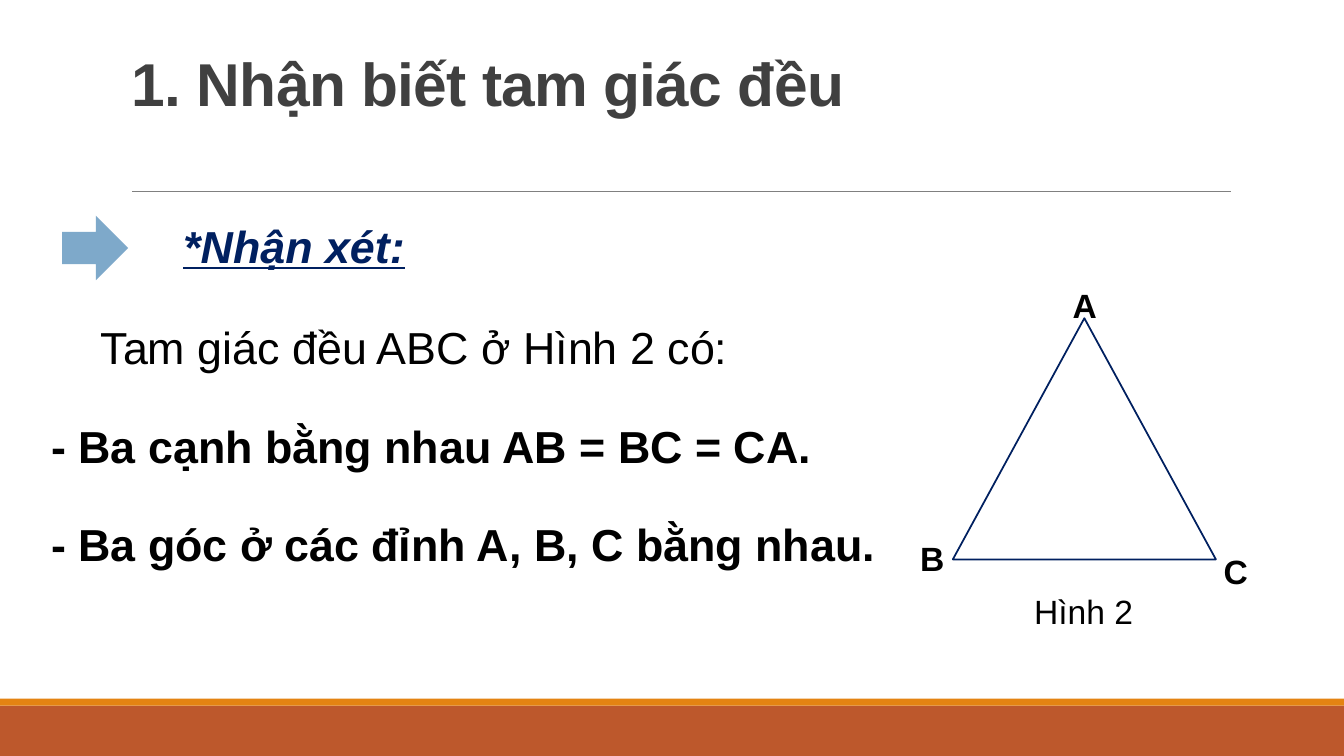
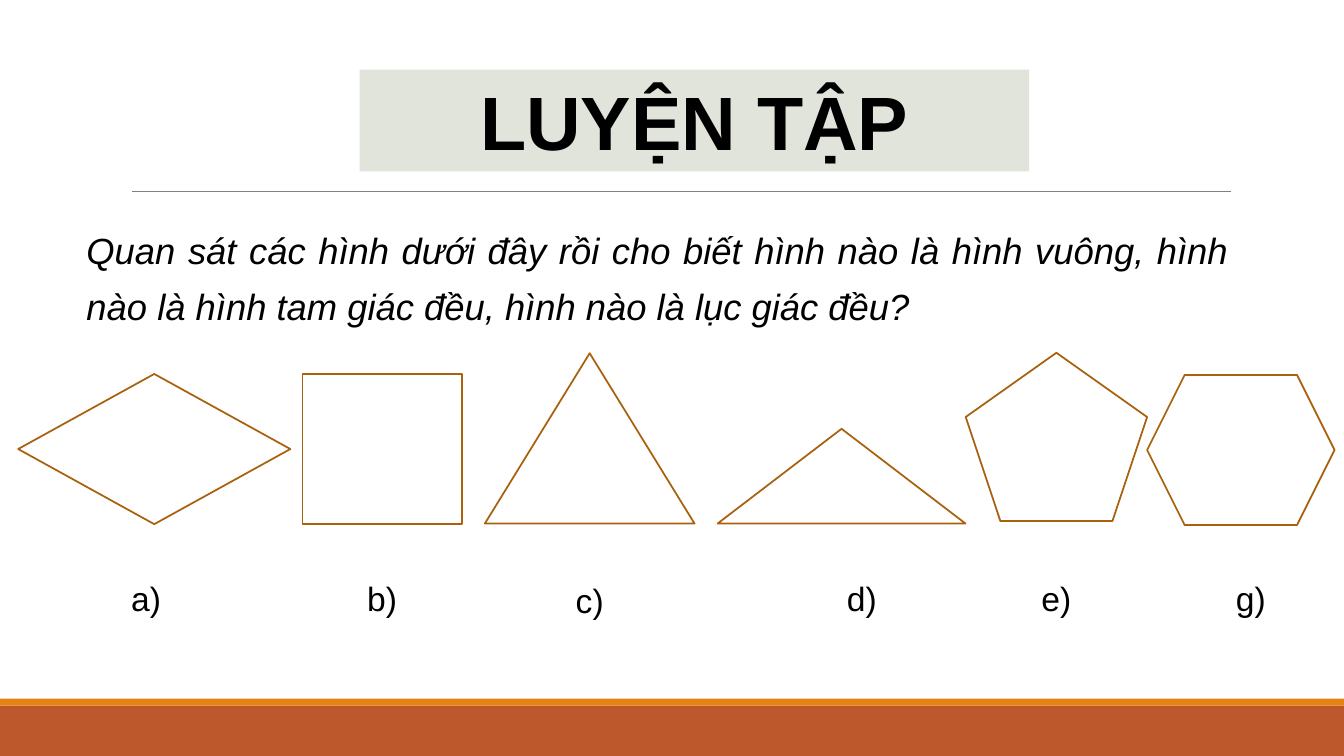
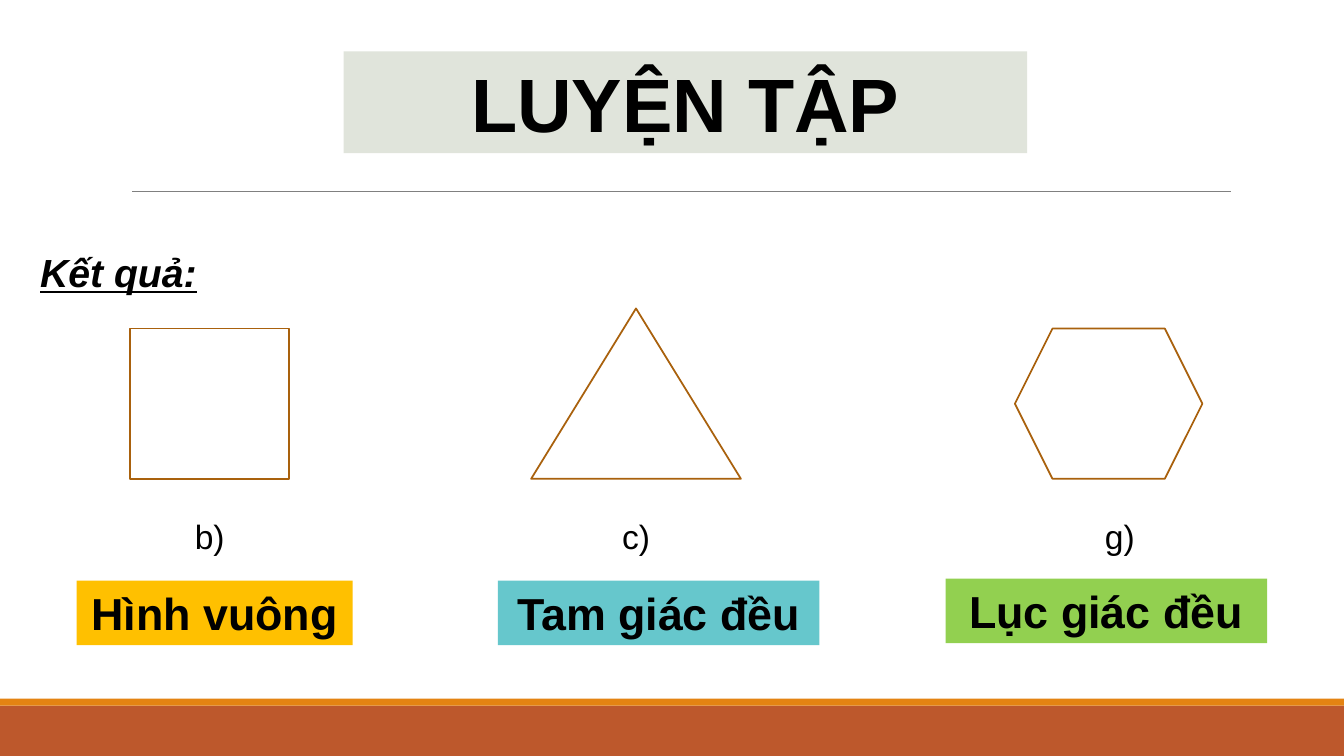
from lxml import etree
from pptx import Presentation
from pptx.dml.color import RGBColor
from pptx.enum.shapes import MSO_CONNECTOR, MSO_SHAPE
from pptx.enum.text import MSO_ANCHOR, PP_ALIGN
from pptx.oxml.ns import qn
from pptx.util import Pt

RECTANGLE, TRIANGLE = MSO_SHAPE.RECTANGLE, MSO_SHAPE.ISOSCELES_TRIANGLE
PENTAGON, HEXAGON = MSO_SHAPE.REGULAR_PENTAGON, MSO_SHAPE.HEXAGON
RHOMBUS, RIGHT_ARROW = MSO_SHAPE.FLOWCHART_DECISION, MSO_SHAPE.RIGHT_ARROW
LEFT, CENTER, JUSTIFY = PP_ALIGN.LEFT, PP_ALIGN.CENTER, PP_ALIGN.JUSTIFY

FONT = "Arial"
BLACK = RGBColor(0x00, 0x00, 0x00)
WHITE = RGBColor(0xFF, 0xFF, 0xFF)
RUST = RGBColor(0xBD, 0x58, 0x2C)
ORANGE = RGBColor(0xE4, 0x83, 0x12)
RULE_GRAY = RGBColor(0x80, 0x80, 0x80)
TITLE_GRAY = RGBColor(0x40, 0x40, 0x40)
NAVY = RGBColor(0x00, 0x20, 0x60)
ARROW_BLUE = RGBColor(0x7E, 0xA9, 0xCA)
BANNER_GRAY = RGBColor(0xE0, 0xE4, 0xDB)
BROWN = RGBColor(0xA9, 0x61, 0x0D)
YELLOW = RGBColor(0xFF, 0xC0, 0x00)
TEAL = RGBColor(0x66, 0xC7, 0xCC)
GREEN = RGBColor(0x92, 0xD0, 0x50)

# All lengths are in points.
SLIDE_WIDTH, SLIDE_HEIGHT = 960, 540
FOOTER_TOP, STRIPE_HEIGHT = 504, 5
RULE_LEFT, RULE_RIGHT, RULE_TOP = 94.5, 879, 136.8
LABEL_WIDTH, LABEL_HEIGHT = 99.4, 36
NAME_HEIGHT = 46.1

SQUARE_SIZE = (113.8, 107.3)
TRIANGLE_SIZE = (149.8, 121.7)
HEXAGON_SIZE = (133.9, 107.3)

TITLE = "1. Nhận biết tam giác đều"
REMARK = "*Nhận xét:"
INTRODUCTION = "Tam giác đều ABC ở Hình 2 có:"
PROPERTIES = ["- Ba cạnh bằng nhau AB = BC = CA.",
              "- Ba góc ở các đỉnh A, B, C bằng nhau."]
VERTICES = [("A", 747.4, 200.2), ("B", 638.6, 380.9), ("C", 855.4, 390.2)]
CAPTION = "Hình 2"

PRACTICE = "LUYỆN TẬP"
QUESTION = ("Quan sát các hình dưới đây rồi cho biết hình nào là hình vuông, "
            "hình nào là hình tam giác đều, hình nào là lục giác đều?")
# label, preset, size, left, bottom, label left, label top
FIGURES = [
    ("a)", RHOMBUS, (194.4, 107.3), 13, 374.4, 54.7, 409),
    ("b)", RECTANGLE, SQUARE_SIZE, 216, 374.4, 223.2, 409),
    ("c)", TRIANGLE, TRIANGLE_SIZE, 346.3, 374, 371.5, 410.4),
    ("d)", TRIANGLE, (177.1, 67.7), 512.6, 374, 565.9, 409),
    ("e)", PENTAGON, (129.6, 120.2), 689.8, 372.2, 704.9, 409),
    ("g)", HEXAGON, HEXAGON_SIZE, 819.4, 375.1, 843.8, 409),
]

RESULT = "Kết quả:"
ANSWER_BOTTOM, ANSWER_LABEL_TOP = 342, 365
# label, preset, size, left, label left, name, name left, name top, name width, fill
ANSWERS = [
    ("b)", RECTANGLE, SQUARE_SIZE, 92.9, 100.1,
     "Hình vuông", 54.7, 414.7, 197.3, YELLOW),
    ("c)", TRIANGLE, TRIANGLE_SIZE, 379.4, 404.6,
     "Tam giác đều", 355.7, 414.7, 229.7, TEAL),
    ("g)", HEXAGON, HEXAGON_SIZE, 725, 750.2,
     "Lục giác đều", 675.4, 413.3, 229.7, GREEN),
]


def write(shape, lines, size, color=BLACK, bold=False, italic=False,
          underline=False, align=LEFT, line_spacing=None, gap=0, wrap=True):
    """Fill a shape with one paragraph per line, all in the same style."""
    frame = shape.text_frame
    frame.word_wrap = wrap
    frame.text = "\n".join(lines)
    for paragraph in frame.paragraphs:
        paragraph.alignment = align
        paragraph.line_spacing = line_spacing
        paragraph.space_before = paragraph.space_after = Pt(gap)
        font = paragraph.runs[0].font
        font.name, font.size, font.color.rgb = FONT, Pt(size), color
        font.bold, font.italic, font.underline = bold, italic, underline


def add_text(shapes, box, lines, size, **style):
    text_box = shapes.add_textbox(*map(Pt, box))
    write(text_box, lines, size, **style)
    return text_box


def add_preset(shapes, preset, box, fill, line=None):
    shape = shapes.add_shape(preset, *map(Pt, box))
    shape.shadow.inherit = False
    shape.fill.solid()
    shape.fill.fore_color.rgb = fill
    if line is None:
        shape.line.fill.background()
    else:
        shape.line.color.rgb = line
        shape.line.width = Pt(1.25)
    return shape


def add_figure(shapes, preset, size, left, bottom):
    width, height = size
    add_preset(shapes, preset, (left, bottom - height, width, height), WHITE, BROWN)


def add_label(shapes, text, left, top):
    add_text(shapes, (left, top, LABEL_WIDTH, LABEL_HEIGHT), [text], 24, align=CENTER)


def add_plate(shapes, box, text, size, fill):
    """Draw a coloured rectangle with bold centred text."""
    plate = add_preset(shapes, RECTANGLE, box, fill)
    write(plate, [text], size, bold=True, align=CENTER)


def add_base_slide(presentation):
    """Add a blank slide with the footer bands and the rule under the title."""
    slide = presentation.slides.add_slide(presentation.slide_layouts[6])
    shapes = slide.shapes
    add_preset(shapes, RECTANGLE,
               (0, FOOTER_TOP, SLIDE_WIDTH, SLIDE_HEIGHT - FOOTER_TOP), RUST)
    add_preset(shapes, RECTANGLE,
               (0, FOOTER_TOP - STRIPE_HEIGHT, SLIDE_WIDTH, STRIPE_HEIGHT), ORANGE)
    rule = shapes.add_connector(MSO_CONNECTOR.STRAIGHT, Pt(RULE_LEFT), Pt(RULE_TOP),
                                Pt(RULE_RIGHT), Pt(RULE_TOP))
    rule.line.color.rgb = RULE_GRAY
    rule.line.width = Pt(0.5)
    etree.SubElement(rule._element.spPr, qn("a:effectLst"))
    return shapes


def build_recognition(presentation):
    shapes = add_base_slide(presentation)
    title = add_text(shapes, (87.1, 36.7, 792, 51.8), [TITLE], 43.2,
                     color=TITLE_GRAY, bold=True, line_spacing=0.85)
    title.text_frame.vertical_anchor = MSO_ANCHOR.BOTTOM
    run = title.text_frame.paragraphs[0].runs[0]
    run.font._element.set("spc", "-50")

    add_preset(shapes, RIGHT_ARROW, (44.3, 154.1, 47.2, 46.1), ARROW_BLUE)
    add_text(shapes, (123.8, 152.6, 174.2, 46.1), [REMARK], 32, color=NAVY,
             bold=True, italic=True, underline=True, wrap=False)
    add_text(shapes, (64.8, 224.6, 466.6, 46.1), [INTRODUCTION], 32, wrap=False)
    add_text(shapes, (29.5, 276.5, 636.5, 135.4), PROPERTIES, 32, bold=True,
             align=JUSTIFY, line_spacing=1.5, gap=6)

    drawing = shapes.add_group_shape().shapes
    add_preset(drawing, TRIANGLE, (680.6, 227.3, 187.9, 172.3), WHITE, NAVY)
    for name, left, top in VERTICES:
        add_text(drawing, (left, top, 54.7, 36.7), [name], 24, bold=True, align=CENTER)
    add_text(shapes, (731.5, 418.3, 85.7, 36), [CAPTION], 24, wrap=False)


def build_question(presentation):
    shapes = add_base_slide(presentation)
    add_plate(shapes, (257, 49.7, 478.1, 72.7), PRACTICE, 54, BANNER_GRAY)
    add_text(shapes, (54.7, 149.8, 830.9, 85), [QUESTION], 26, italic=True,
             align=JUSTIFY, line_spacing=1.3)
    for label, preset, size, left, bottom, label_left, label_top in FIGURES:
        add_figure(shapes, preset, size, left, bottom)
        add_label(shapes, label, label_left, label_top)


def build_answers(presentation):
    shapes = add_base_slide(presentation)
    add_plate(shapes, (245.5, 36.7, 488.2, 72.7), PRACTICE, 54, BANNER_GRAY)
    add_text(shapes, (21.6, 157, 164.2, 58.3), [RESULT], 28, bold=True, italic=True,
             underline=True, align=JUSTIFY, line_spacing=1.5)
    for (label, preset, size, left, label_left,
         name, name_left, name_top, name_width, fill) in ANSWERS:
        answer = shapes.add_group_shape().shapes
        add_figure(answer, preset, size, left, ANSWER_BOTTOM)
        add_label(answer, label, label_left, ANSWER_LABEL_TOP)
        add_plate(answer, (name_left, name_top, name_width, NAME_HEIGHT), name, 32, fill)


def main():
    presentation = Presentation()
    presentation.slide_width = Pt(SLIDE_WIDTH)
    presentation.slide_height = Pt(SLIDE_HEIGHT)
    build_recognition(presentation)
    build_question(presentation)
    build_answers(presentation)
    presentation.save("out.pptx")


if __name__ == "__main__":
    main()
